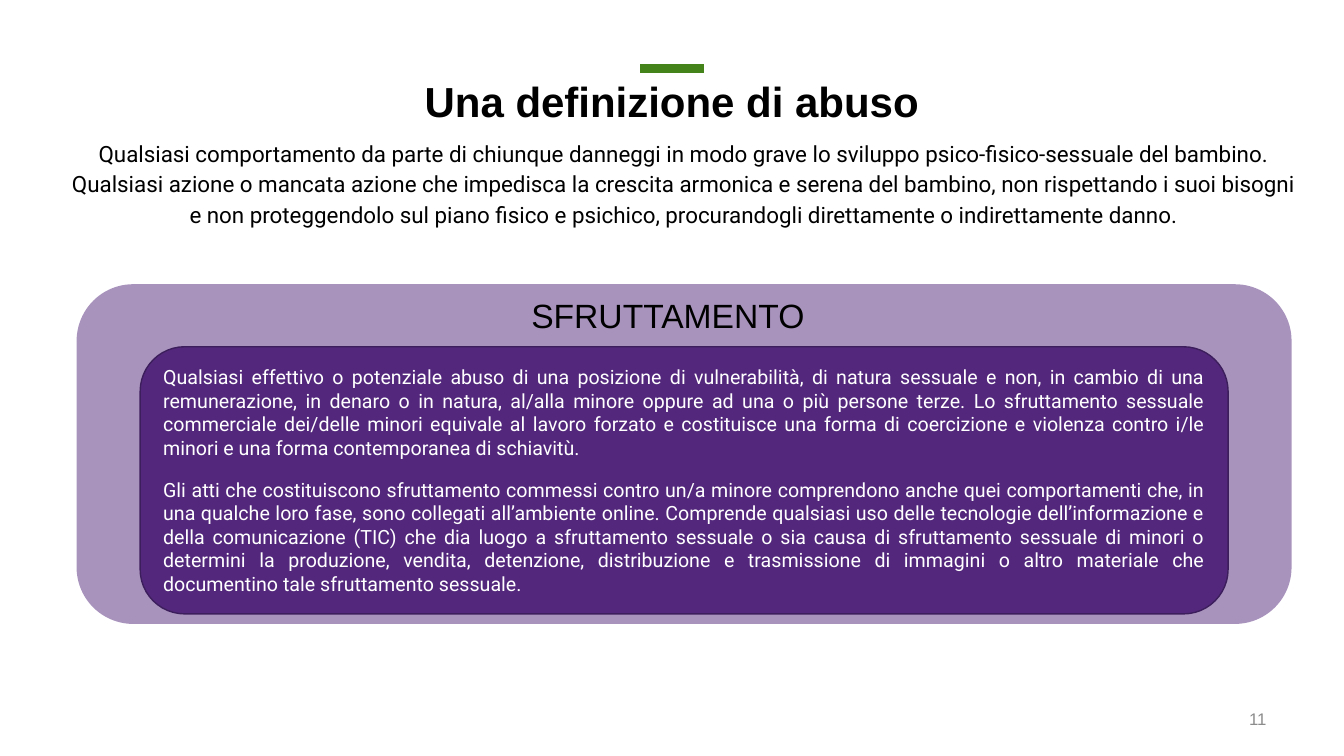
from lxml import etree
from pptx import Presentation
from pptx.dml.color import RGBColor
from pptx.enum import shapes, text
from pptx.oxml import ns
from pptx.util import Inches, Pt

# Content
TITLE = "Una definizione di abuso"
DEFINITION = (
    "Qualsiasi comportamento da parte di chiunque danneggi in modo grave lo sviluppo "
    "psico-fisico-sessuale del bambino. Qualsiasi azione o mancata azione che impedisca la "
    "crescita armonica e serena del bambino, non rispettando i suoi bisogni e non "
    "proteggendolo sul piano fisico e psichico, procurandogli direttamente o "
    "indirettamente danno."
)
PANEL_TITLE = "SFRUTTAMENTO"
EXPLOITATION = [
    "Qualsiasi effettivo o potenziale abuso di una posizione di vulnerabilità, di natura "
    "sessuale e non, in cambio di una remunerazione, in denaro o in natura, al/alla minore "
    "oppure ad una o più persone terze. Lo sfruttamento sessuale commerciale dei/delle "
    "minori equivale al lavoro forzato e costituisce una forma di coercizione e violenza "
    "contro i/le minori e una forma contemporanea di schiavitù.",
    "Gli atti che costituiscono sfruttamento commessi contro un/a minore comprendono anche "
    "quei comportamenti che, in una qualche loro fase, sono collegati all’ambiente online. "
    "Comprende qualsiasi uso delle tecnologie dell’informazione e della comunicazione (TIC) "
    "che dia luogo a sfruttamento sessuale o sia causa di sfruttamento sessuale di minori o "
    "determini la produzione, vendita, detenzione, distribuzione e trasmissione di immagini "
    "o altro materiale che documentino tale sfruttamento sessuale.",
]
PAGE_NUMBER = "11"
COLORS = {
    "accent": "448319",
    "purple": "53287C",
    "outline": "3D1E5C",
    "black": "000000",
    "white": "FFFFFF",
    "gray": "8C8C8C",
}
ALIGN = text.PP_ALIGN
ANCHOR = text.MSO_ANCHOR

presentation = Presentation()
presentation.slide_width = Inches(13.33)
presentation.slide_height = Inches(7.5)
slide = presentation.slides.add_slide(presentation.slide_layouts[6])


def color(name):
    return RGBColor.from_string(COLORS[name])


def write(shape, paragraphs, size, font="Arial", ink="black", bold=False,
          align=ALIGN.CENTER, anchor=ANCHOR.TOP, line_spacing=None, gap=0, inset=0.05):
    frame = shape.text_frame
    frame.word_wrap = True
    frame.vertical_anchor = anchor
    frame.margin_top = frame.margin_bottom = Inches(inset)
    for index, content in enumerate(paragraphs):
        paragraph = frame.add_paragraph() if index else frame.paragraphs[0]
        paragraph.text = content
        paragraph.alignment = align
        if line_spacing:
            paragraph.line_spacing = line_spacing
        if index:
            paragraph.space_before = Pt(gap)
        paragraph.font.name = font
        paragraph.font.size = Pt(size)
        paragraph.font.bold = bold
        paragraph.font.color.rgb = color(ink)


def add_text(box, *paragraphs, **style):
    write(slide.shapes.add_textbox(*map(Inches, box)), paragraphs, **style)


def add_panel(box, outline=None, opacity=None):
    panel = slide.shapes.add_shape(shapes.MSO_SHAPE.ROUNDED_RECTANGLE, *map(Inches, box))
    panel.shadow.inherit = False
    panel.fill.solid()
    panel.fill.fore_color.rgb = color("purple")
    if opacity:
        fill_color = panel.fill._xPr.find(ns.qn("a:solidFill"))[0]
        etree.SubElement(fill_color, ns.qn("a:alpha"), val=str(opacity * 1000))
    if outline:
        panel.line.color.rgb = color(outline)
        panel.line.width = Pt(1)
    else:
        panel.line.fill.background()
    return panel


# Accent rule and title
rule = slide.shapes.add_connector(
    shapes.MSO_CONNECTOR.STRAIGHT, *map(Inches, (6.35, 0.68, 6.98, 0.68)))
rule.line.color.rgb = color("accent")
rule.line.width = Pt(6)
etree.SubElement(rule._element.spPr, ns.qn("a:effectLst"))
add_text((0.68, 0.76, 11.97, 0.63), TITLE, size=30, bold=True, line_spacing=0.9)

# Outer panel and definition
add_panel((0.76, 2.82, 12.05, 3.37), opacity=50)
add_text((0.6, 1.23, 12.36, 1.13), DEFINITION,
         size=16, font="Roboto", line_spacing=1.14, inset=0.12)

# Page number
add_text((11.95, 6.98, 0.71, 0.31), PAGE_NUMBER,
         size=12, ink="gray", align=ALIGN.RIGHT, anchor=ANCHOR.MIDDLE)

# Exploitation panel and its heading
inner_panel = add_panel((1.39, 3.44, 10.79, 2.65), outline="outline")
write(inner_panel, EXPLOITATION, size=14, font="Roboto", ink="white",
      align=ALIGN.JUSTIFY, anchor=ANCHOR.MIDDLE, gap=13)
add_text((3.91, 2.88, 5.43, 0.5), PANEL_TITLE, size=24)

presentation.save("out.pptx")
